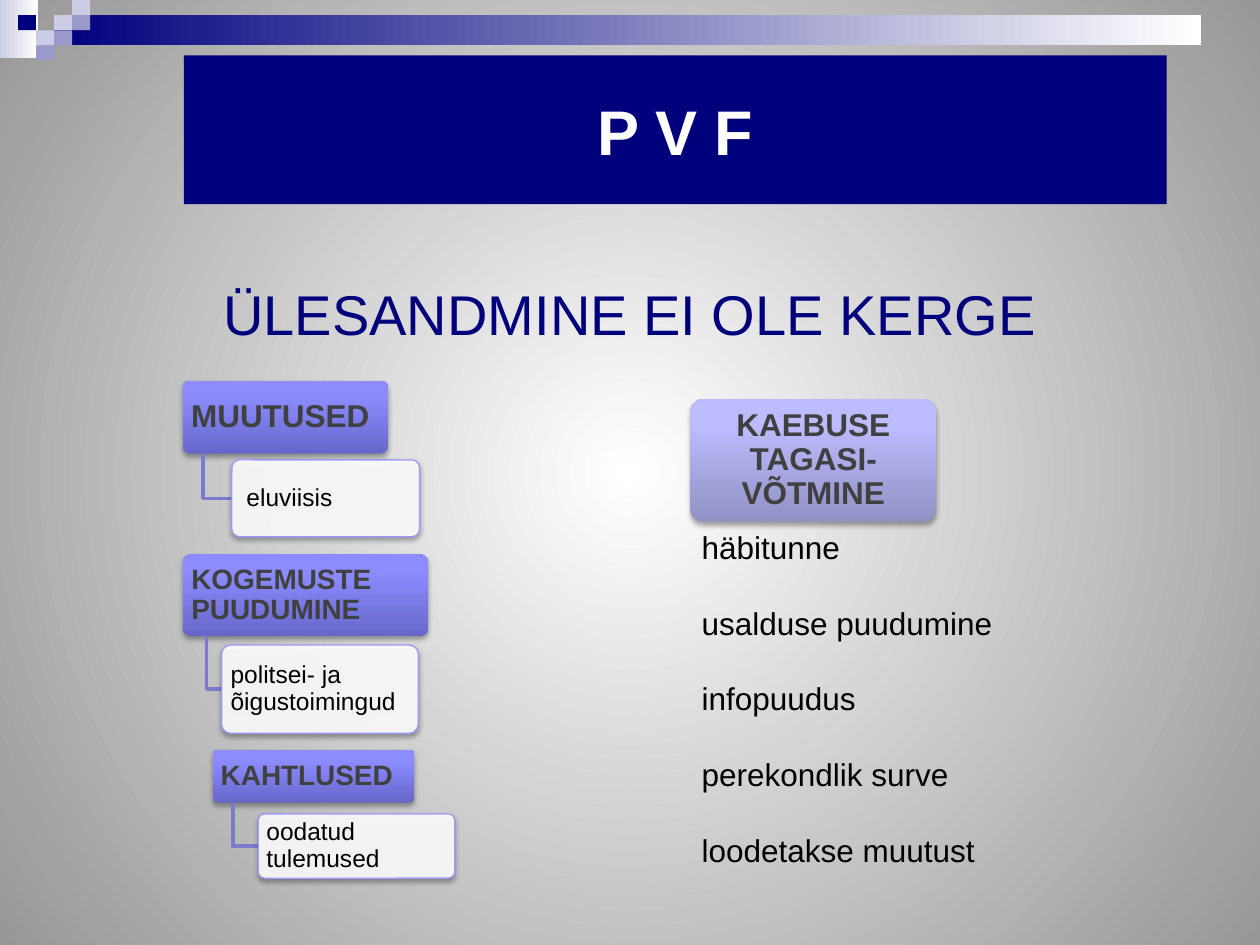
from lxml.etree import SubElement
from pptx import Presentation
from pptx.dml.color import RGBColor
from pptx.enum.shapes import MSO_SHAPE as Shape
from pptx.enum.text import MSO_ANCHOR as Anchor, PP_ALIGN as Align
from pptx.oxml.ns import qn
from pptx.util import Inches, Pt

NAVY = RGBColor(0x00, 0x00, 0x7D)
LAVENDER = RGBColor(0xCC, 0xCC, 0xE6)
MAUVE = RGBColor(0x99, 0x99, 0xCC)
WHITE = RGBColor(0xFF, 0xFF, 0xFF)
BLACK = RGBColor(0x00, 0x00, 0x00)
GREY = RGBColor(0x97, 0x97, 0x97)
CHARCOAL = RGBColor(0x40, 0x40, 0x40)
BORDER = RGBColor(0x99, 0x99, 0xFF)
BRANCH = RGBColor(0x7B, 0x7B, 0xCC)
VIOLET = [(0, RGBColor(0x67, 0x67, 0xCA)), (80, RGBColor(0x8C, 0x8C, 0xFF)),
          (100, RGBColor(0x8E, 0x8E, 0xFF))]
PALE_VIOLET = [(0, RGBColor(0x91, 0x91, 0xC4)), (80, RGBColor(0xBC, 0xBC, 0xFF)),
               (100, RGBColor(0xBE, 0xBE, 0xFF))]

TITLE = "P V F"
SUBTITLE = "ÜLESANDMINE EI OLE KERGE"
CAUSES = [
    (("MUUTUSED", (1.45, 3.02, 1.63, 0.58), 18),
     ("eluviisis", (1.84, 3.65, 1.49, 0.61), 0.1), 1.61),
    (("KOGEMUSTE PUUDUMINE", (1.45, 4.4, 1.95, 0.65), 16),
     ("politsei- ja õigustoimingud", (1.76, 5.12, 1.56, 0.7), 0.05), 1.64),
    (("KAHTLUSED", (1.69, 5.95, 1.6, 0.42), 16),
     ("oodatud tulemused", (2.05, 6.46, 1.56, 0.51), 0.05), 1.85),
]
WITHDRAWAL = "KAEBUSE TAGASI-VÕTMINE"
REASONS = ["häbitunne", "usalduse puudumine", "infopuudus",
           "perekondlik surve", "loodetakse muutust"]
SQUARES = [(3, 1, LAVENDER), (4, 0, LAVENDER), (4, 1, MAUVE), (2, 2, LAVENDER),
           (1, 1, NAVY), (3, 2, MAUVE), (2, 3, MAUVE)]
SQUARE_W, SQUARE_H = 0.143, 0.12

prs = Presentation()
prs.slide_width, prs.slide_height = Inches(10), Inches(7.5)
slide = prs.slides.add_slide(prs.slide_layouts[6])


def set_gradient(fill, owner, stops, angle=None):
    fill.gradient()
    grad = owner.find(".//" + qn("a:gradFill"))
    for child in list(grad):
        grad.remove(child)
    stop_list = SubElement(grad, qn("a:gsLst"))
    for position, color in stops:
        stop = SubElement(stop_list, qn("a:gs"), pos=str(position * 1000))
        SubElement(stop, qn("a:srgbClr"), val=str(color))
    if angle is None:
        circle = SubElement(grad, qn("a:path"), path="circle")
        SubElement(circle, qn("a:fillToRect"), l="50000", t="50000", r="50000", b="50000")
    else:
        SubElement(grad, qn("a:lin"), ang=str(angle * 60000), scaled="0")


def add_block(box, fill, angle=0, kind=Shape.RECTANGLE):
    block = slide.shapes.add_shape(kind, *map(Inches, box))
    block.shadow.inherit = False
    block.line.fill.background()
    if isinstance(fill, list):
        set_gradient(block.fill, block._element.spPr, fill, angle)
    else:
        block.fill.solid()
        block.fill.fore_color.rgb = fill
    return block


def write(shape, lines, size, color, bold=False, align=Align.LEFT,
          anchor=Anchor.MIDDLE, spacing=None, gap=0):
    frame = shape.text_frame
    frame.word_wrap = True
    frame.vertical_anchor = anchor
    for index, line in enumerate(lines):
        paragraph = frame.add_paragraph() if index else frame.paragraphs[0]
        paragraph.alignment = align
        if spacing:
            paragraph.line_spacing = spacing
        if index:
            paragraph.space_before = Pt(gap)
        run = paragraph.add_run()
        run.text = line
        run.font.name, run.font.size, run.font.bold = "Arial", Pt(size), bold
        run.font.color.rgb = color


def add_card(text, box, fill, size, color, bold=False, align=Align.LEFT, left=0.05):
    card = add_block(box, fill, 270, Shape.ROUNDED_RECTANGLE)
    card.adjustments[0] = 0.1
    effects = card._element.spPr.find(qn("a:effectLst"))
    shadow = SubElement(effects, qn("a:outerShdw"), blurRad=str(Pt(3.1)), dist=str(Pt(1.8)),
                        dir="5400000", rotWithShape="0")
    shade = SubElement(shadow, qn("a:srgbClr"), val=str(BLACK))
    SubElement(shade, qn("a:alpha"), val="35000")
    frame = card.text_frame
    frame.margin_left, frame.margin_right = Inches(left), Inches(0.05)
    frame.margin_top = frame.margin_bottom = Inches(0.04)
    write(card, [text], size, color, bold, align, spacing=0.9)
    return card


def add_branch(x, top, end_x, end_y):
    builder = slide.shapes.build_freeform(Inches(x), Inches(top))
    builder.add_line_segments([(Inches(x), Inches(end_y)), (Inches(end_x), Inches(end_y))],
                              close=False)
    branch = builder.convert_to_shape()
    branch.shadow.inherit = False
    branch.fill.background()
    branch.line.color.rgb = BRANCH
    branch.line.width = Pt(2)


def add_text(box, lines, size, color, **style):
    write(slide.shapes.add_textbox(*map(Inches, box)), lines, size, color,
          anchor=Anchor.TOP, **style)


set_gradient(slide.background.fill, slide._element, [(0, WHITE), (100, GREY)])

add_block((0, 0, 0.3, 0.46), [(0, LAVENDER), (100, WHITE)])
add_block((0.43, 0.12, 9.1, 0.24), [(0, NAVY), (100, WHITE)])
for column, row, color in SQUARES:
    add_block((column * SQUARE_W, row * SQUARE_H, SQUARE_W, SQUARE_H), color)

write(add_block((1.46, 0.44, 7.8, 1.18), NAVY), [TITLE], 36, WHITE, True, Align.CENTER)
add_text((0.5, 2.17, 9, 0.7), [SUBTITLE], 32, NAVY, align=Align.CENTER)

for (cause, cause_box, size), (detail, detail_box, left), branch_x in CAUSES:
    add_card(cause, cause_box, VIOLET, size, CHARCOAL, True)
    add_branch(branch_x, cause_box[1] + cause_box[3],
               detail_box[0], detail_box[1] + detail_box[3] / 2)
    card = add_card(detail, detail_box, WHITE, 14, BLACK, left=left)
    card.line.color.rgb = BORDER
    card.line.width = Pt(0.75)
    white = card._element.spPr.find(qn("a:solidFill")).find(qn("a:srgbClr"))
    SubElement(white, qn("a:alpha"), val="90000")

add_card(WITHDRAWAL, (5.48, 3.17, 1.95, 0.97), PALE_VIOLET, 18, CHARCOAL, True, Align.CENTER)
add_text((5.47, 4.14, 2.76, 2.83), REASONS, 18, BLACK, align=Align.JUSTIFY, gap=21.7)

prs.save("out.pptx")
